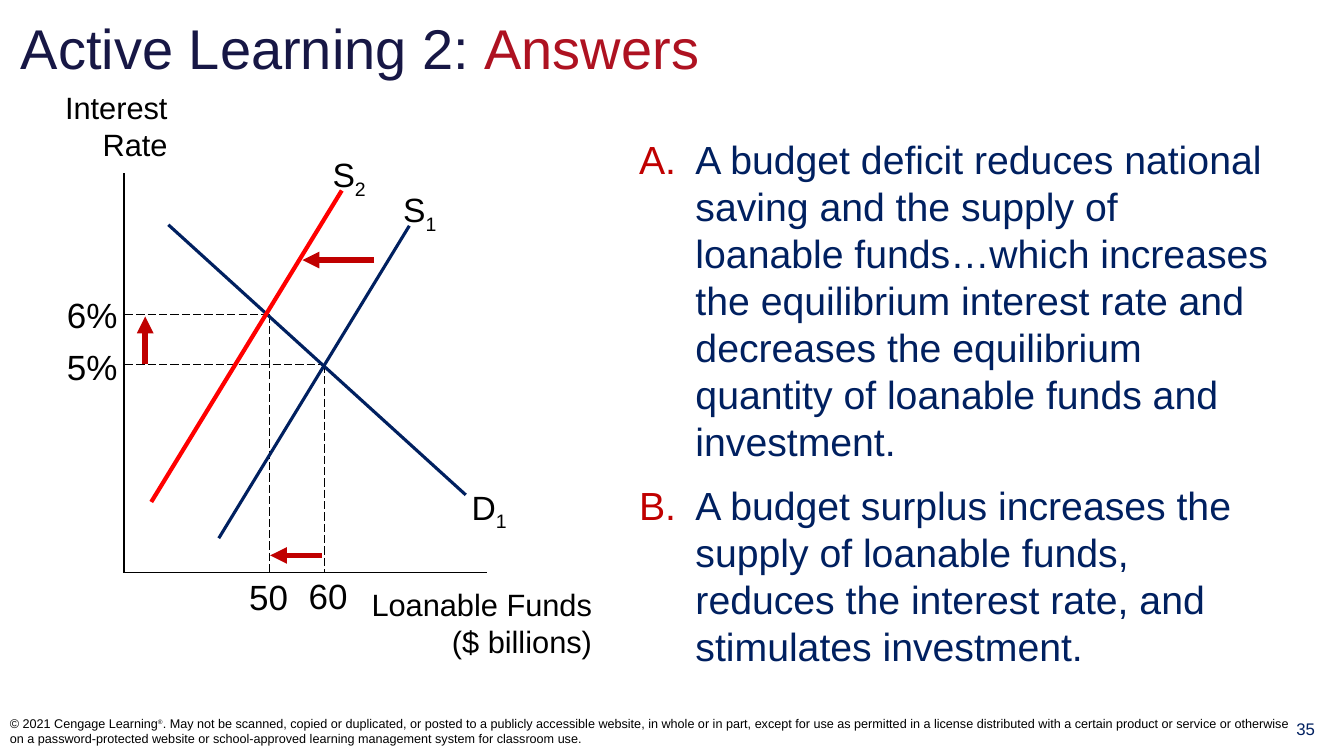
import pptx
import pptx.util
import pptx.dml.color
import pptx.enum.dml
import pptx.enum.shapes
import pptx.enum.text
from dataclasses import dataclass
from lxml import etree
from pptx.oxml.ns import qn

Pt = pptx.util.Pt
Align = pptx.enum.text.PP_ALIGN
Anchor = pptx.enum.text.MSO_ANCHOR


@dataclass(frozen=True)
class Theme:
    font: str = "Arial"
    title: str = "171745"
    answer: str = "AE1221"
    navy: str = "002060"
    red: str = "FF0000"
    accent: str = "C00000"
    black: str = "000000"
    head: int = 40
    body: int = 28
    value: int = 25
    curve: int = 24
    axis: int = 22
    page: int = 12
    note: int = 9
    mark: int = 8


class Canvas:
    """Draws styled elements on one slide, in lengths of 100 px to the inch."""

    def __init__(self, slide, theme):
        self.slide = slide
        self.theme = theme

    def emu(self, px):
        return pptx.util.Emu(px * 9144)

    def rgb(self, color):
        return pptx.dml.color.RGBColor.from_string(color)

    def frame(self, box, anchor=Anchor.TOP, wrap=True, side=10):
        shape = self.slide.shapes.add_textbox(*map(self.emu, box))
        frame = shape.text_frame
        frame.word_wrap = wrap
        frame.vertical_anchor = anchor
        frame.margin_left = frame.margin_right = self.emu(side)
        frame.margin_top = frame.margin_bottom = self.emu(5)
        return frame

    def style(self, para, size, color, align=Align.LEFT):
        para.alignment = align
        para.font.name = self.theme.font
        para.font.size = Pt(size)
        para.font.color.rgb = self.rgb(color)

    def text(self, box, words, size, color, align=Align.LEFT, **frame):
        para = self.frame(box, **frame).paragraphs[0]
        self.style(para, size, color, align)
        self.run(para, words)
        return para

    def run(self, para, words, shift=0, size=None, color=None):
        run = para.add_run()
        run.text = words
        if shift:
            run._r.get_or_add_rPr().set("baseline", str(shift * 1000))
        if size:
            run.font.size = Pt(size)
        if color:
            run.font.color.rgb = self.rgb(color)

    def curve(self, left, top, name, index):
        para = self.text((left, top, 60, 50), name, self.theme.curve, self.theme.black)
        self.run(para, index, shift=-25)

    def value(self, left, top, words):
        self.text((left, top, 67, 52), words, self.theme.value,
                  self.theme.black, Align.CENTER, side=0)

    def answers(self, box, items):
        frame = self.frame(box)
        for index, words in enumerate(items):
            para = frame.add_paragraph() if index else frame.paragraphs[0]
            props = para._p.get_or_add_pPr()
            props.set("marL", str(self.emu(56)))
            props.set("indent", str(self.emu(-56)))
            tint = etree.SubElement(props, qn("a:buClr"))
            etree.SubElement(tint, qn("a:srgbClr"), val=self.theme.accent)
            etree.SubElement(props, qn("a:buFont"), typeface=self.theme.font)
            etree.SubElement(props, qn("a:buAutoNum"), type="alphaUcPeriod",
                             startAt=str(index + 1))
            if index:
                para.space_before = Pt(6)
            para.space_after = Pt(6)
            self.style(para, self.theme.body, self.theme.navy)
            self.run(para, words)

    def line(self, ends, color, width, dash=False, arrow=False):
        kind = pptx.enum.shapes.MSO_CONNECTOR.STRAIGHT
        link = self.slide.shapes.add_connector(kind, *map(self.emu, ends))
        link.line.color.rgb = self.rgb(color)
        link.line.width = Pt(width)
        if dash:
            link.line.dash_style = pptx.enum.dml.MSO_LINE.LONG_DASH
        if arrow:
            etree.SubElement(link.line._get_or_add_ln(), qn("a:tailEnd"), type="triangle")
        etree.SubElement(link._element.spPr, qn("a:effectLst"))


def main():
    deck = pptx.Presentation()
    theme = Theme()
    art = Canvas(deck.slides.add_slide(deck.slide_layouts[6]), theme)
    deck.slide_width, deck.slide_height = art.emu(1333), art.emu(750)

    title = art.text((11, 11, 1300, 72), "Active Learning 2: ", theme.head,
                     theme.title, anchor=Anchor.MIDDLE, wrap=False)
    art.run(title, "Answers", color=theme.answer)
    art.text((1257, 708, 76, 41), "35", theme.page, theme.navy, Align.CENTER)
    art.answers((624, 129, 644, 567), [
        "A budget deficit reduces national saving and the supply of loanable "
        "funds…which increases the equilibrium interest rate and decreases the "
        "equilibrium quantity of loanable funds and investment.",
        "A budget surplus increases the supply of loanable funds, reduces the "
        "interest rate, and stimulates investment."])

    for ends in ((123, 172, 123, 568), (123, 568, 483, 568)):
        art.line(ends, theme.black, 0.75)
    for box, words in (((25, 83, 151, 83), "Interest Rate"),
                       ((335, 576, 262, 83), "Loanable Funds ($ billions)")):
        art.text(box, words, theme.axis, theme.black, Align.RIGHT)

    for right, level in ((322, 362), (267, 312)):
        art.line((124, level, right, level), theme.black, 0.75, dash=True)
        art.line((right, level, right, 568), theme.black, 0.75, dash=True)

    for ends, color, width in (((167, 223, 462, 491), theme.navy, 2.25),
                               ((217, 534, 406, 224), theme.navy, 2.25),
                               ((150, 498, 339, 189), theme.red, 3)):
        art.line(ends, color, width)
    for label in ((458, 478, "D", "1"), (390, 183, "S", "1"), (320, 148, "S", "2")):
        art.curve(*label)
    for label in ((58, 338, "5%"), (58, 286, "6%"), (292, 565, "60"), (233, 566, "50")):
        art.value(*label)
    for ends in ((371, 258, 300, 258), (144, 361, 144, 314), (319, 551, 268, 551)):
        art.line(ends, theme.accent, 4, arrow=True)

    note = art.text((0, 700, 1292, 50), "© 2021 Cengage Learning", theme.note,
                    theme.black, anchor=Anchor.MIDDLE)
    art.run(note, "®", shift=30, size=theme.mark)
    art.run(note, ". May not be scanned, copied or duplicated, or posted to a publicly "
            "accessible website, in whole or in part, except for use as permitted in a "
            "license distributed with a certain product or service or otherwise on a "
            "password-protected website or school-approved learning management system "
            "for classroom use.")
    deck.save("out.pptx")


if __name__ == "__main__":
    main()
